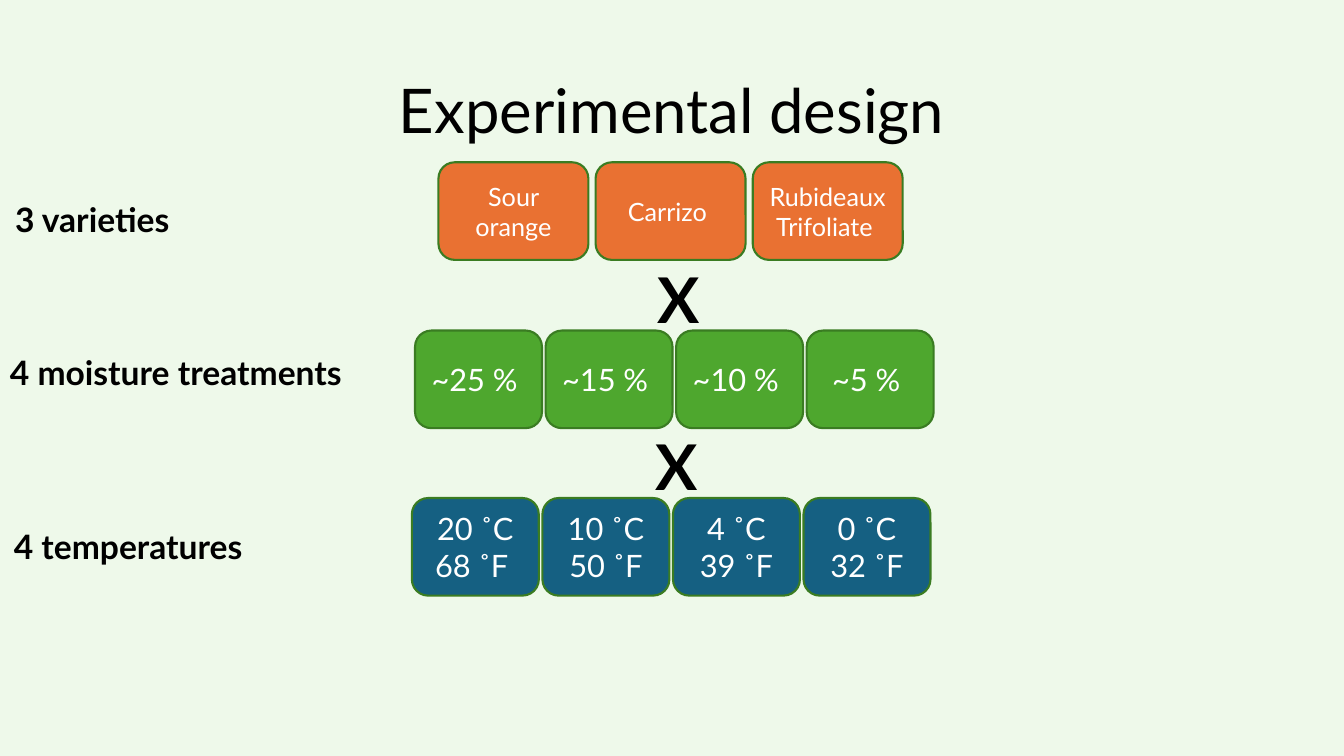
"""Builds the experimental design slide."""
from pptx import Presentation
from pptx.dml.color import RGBColor
from pptx.enum.shapes import MSO_SHAPE
from pptx.enum.text import MSO_ANCHOR, MSO_AUTO_SIZE, PP_ALIGN
from pptx.util import Cm, Pt

ROUNDED = MSO_SHAPE.ROUNDED_RECTANGLE
MIDDLE = MSO_ANCHOR.MIDDLE
NO_FIT, GROW = MSO_AUTO_SIZE.NONE, MSO_AUTO_SIZE.SHAPE_TO_FIT_TEXT
LEFT, CENTER = PP_ALIGN.LEFT, PP_ALIGN.CENTER

PALE_GREEN = RGBColor(0xEE, 0xF9, 0xEA)
ORANGE = RGBColor(0xE9, 0x71, 0x32)
GREEN = RGBColor(0x4E, 0xA7, 0x2E)
BLUE = RGBColor(0x15, 0x60, 0x82)
DARK_GREEN = RGBColor(0x3A, 0x7C, 0x22)
BLACK = RGBColor(0, 0, 0)
WHITE = RGBColor(0xFF, 0xFF, 0xFF)

FACTORS = [
    (11.05, 4.09, 3.78, 3.96, ORANGE, 18,
     ["Sour orange", "Carrizo ", "Rubideaux Trifoliate "]),
    (10.46, 8.33, 3.2, 3.29, GREEN, 22,
     ["~25 % ", "~15 % ", "~10 % ", "~5 % "]),
    (10.38, 12.55, 3.2, 3.29, BLUE, 22,
     ["20 ˚C\n68 ˚F ", "10 ˚C\n50 ˚F", "4 ˚C\n39 ˚F", "0 ˚C\n32 ˚F"]),
]
LABELS = [
    ("X", 16.31, 6.43, 1.4, 2.18, 45),
    ("X", 16.26, 10.64, 1.4, 2.18, 45),
    ("3 varieties", 0.13, 4.9, 4.5, 1.27, 24),
    ("4 moisture treatments", 0, 8.74, 9.14, 1.27, 24),
    ("4 temperatures", 0.1, 13.13, 6.45, 1.27, 24),
]


class DesignSlide:
    """Holds the text style and the current slide."""

    font_name = "Lato"
    card_height = 2.46

    def __init__(self, deck):
        """Add a title-only slide with a pale background."""
        self.page = deck.slides.add_slide(deck.slide_layouts[5])
        fill = self.page.background.fill
        fill.solid()
        fill.fore_color.rgb = PALE_GREEN

    def add_text(self, frame, text, size, color, align, bold=False):
        """Fill a text frame with one paragraph per line."""
        for index, line in enumerate(text.split("\n")):
            para = frame.add_paragraph() if index else frame.paragraphs[0]
            para.alignment = align
            span = para.add_run()
            span.text = line
            span.font.name = self.font_name
            span.font.size = Pt(size)
            span.font.bold = bold
            span.font.color.rgb = color

    def title(self, text):
        """Place and format the title."""
        box = self.page.shapes.title
        box.left, box.top, box.width, box.height = Cm(2.33), Cm(1.01), Cm(29.21), Cm(3.68)
        frame = box.text_frame
        frame.auto_size = NO_FIT
        frame.vertical_anchor = MIDDLE
        self.add_text(frame, text, 44, BLACK, CENTER)
        frame.paragraphs[0].line_spacing = 0.9

    def card(self, text, left, top, width, color, size):
        """Add a rounded card with centred text."""
        box = self.page.shapes.add_shape(
            ROUNDED, Cm(left), Cm(top), Cm(width), Cm(self.card_height))
        box.shadow.inherit = False
        box.fill.solid()
        box.fill.fore_color.rgb = color
        box.line.color.rgb = DARK_GREEN
        box.line.width = Pt(1.5)
        box.text_frame.word_wrap = True
        box.text_frame.vertical_anchor = MIDDLE
        self.add_text(box.text_frame, text, size, WHITE, CENTER)

    def card_row(self, left, top, width, pitch, color, size, texts):
        """Add a row of evenly spaced cards."""
        for index, text in enumerate(texts):
            self.card(text, left + index * pitch, top, width, color, size)

    def label(self, text, left, top, width, height, size):
        """Add a bold label on a single line."""
        box = self.page.shapes.add_textbox(Cm(left), Cm(top), Cm(width), Cm(height))
        box.text_frame.word_wrap = False
        box.text_frame.auto_size = GROW
        self.add_text(box.text_frame, text, size, BLACK, LEFT, bold=True)


def main():
    """Build and save the deck."""
    deck = Presentation()
    deck.slide_width, deck.slide_height = Cm(33.87), Cm(19.05)
    slide = DesignSlide(deck)
    slide.title("Experimental design")
    for factor in FACTORS:
        slide.card_row(*factor)
    for label in LABELS:
        slide.label(*label)
    deck.save("out.pptx")


if __name__ == "__main__":
    main()
